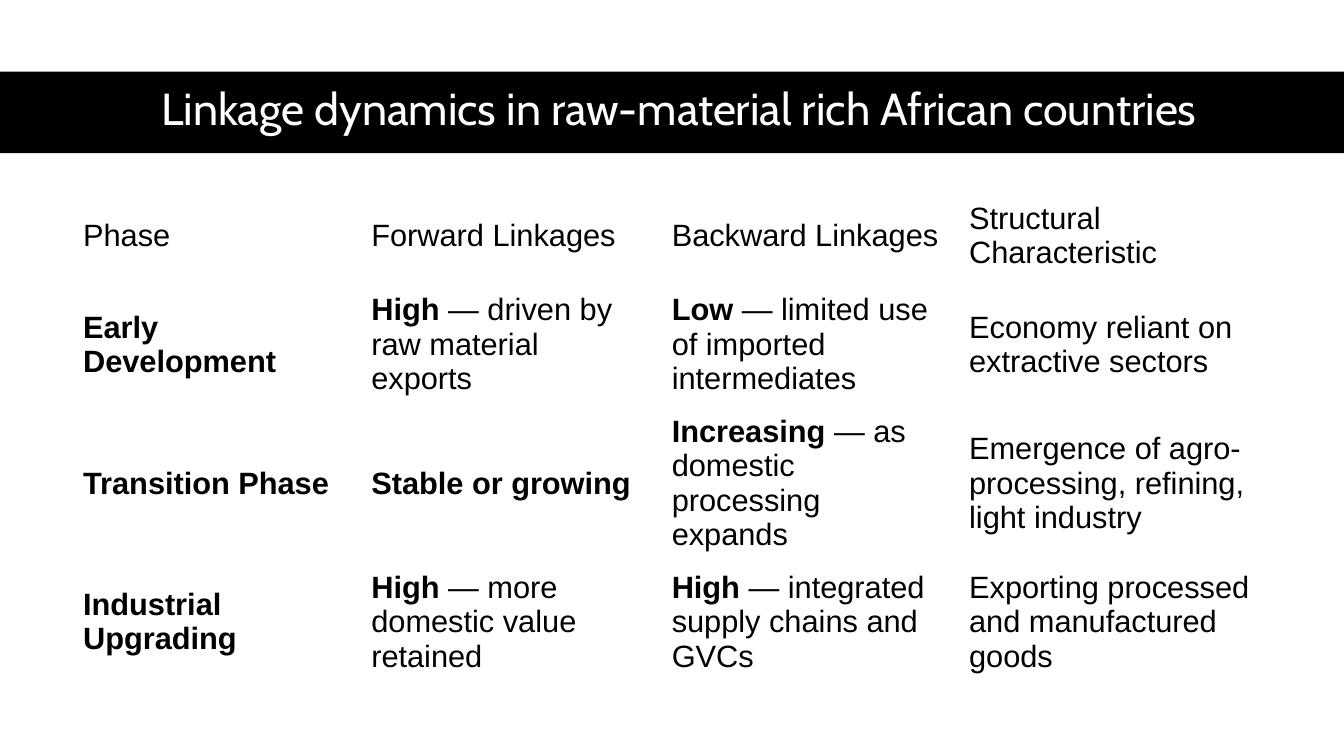
from pptx import Presentation
from pptx.dml.color import RGBColor
from pptx.enum.shapes import MSO_SHAPE
from pptx.enum.text import MSO_ANCHOR, MSO_AUTO_SIZE, PP_ALIGN
from pptx.util import Pt

BLACK = RGBColor(0x00, 0x00, 0x00)
WHITE = RGBColor(0xFF, 0xFF, 0xFF)
RECTANGLE = MSO_SHAPE.RECTANGLE
MIDDLE = MSO_ANCHOR.MIDDLE
CENTER = PP_ALIGN.CENTER
NO_AUTOFIT = MSO_AUTO_SIZE.NONE
TITLE_ONLY = 5

SLIDE_WIDTH, SLIDE_HEIGHT = 960, 540
COLUMN_WIDTHS = (205.9, 214.6, 212.4, 225.4)
ROW_HEIGHTS = (64.8, 90.7, 90.7, 90.7)

# Each cell is a pair: bold lead, regular remainder.
LINKAGE_PHASES = (
    (("", "Phase"), ("", "Forward Linkages"), ("", "Backward Linkages"),
     ("", "Structural Characteristic")),
    (("Early Development", ""),
     ("High", " — driven by raw material exports"),
     ("Low", " — limited use of imported intermediates"),
     ("", "Economy reliant on extractive sectors")),
    (("Transition Phase", ""),
     ("Stable or growing", ""),
     ("Increasing", " — as domestic processing expands"),
     ("", "Emergence of agro-processing, refining, light industry")),
    (("Industrial Upgrading", ""),
     ("High", " — more domestic value retained"),
     ("High", " — integrated supply chains and GVCs"),
     ("", "Exporting processed and manufactured goods")),
)


class SlideBuilder:
    title_font, title_size = "Cabin", 32
    body_font, body_size = "Arial", 22
    cell_margin_x, cell_margin_y = 9, 4.5

    def __init__(self, slide):
        self.slide = slide

    def style_font(self, paragraph, name, size, color):
        font = paragraph.font
        font.name, font.size = name, Pt(size)
        font.color.rgb = color

    def band(self, top, height):
        """Draw a full-width black bar behind everything else."""
        bar = self.slide.shapes.add_shape(
            RECTANGLE, 0, Pt(top), Pt(SLIDE_WIDTH), Pt(height))
        bar.shadow.inherit = False
        bar.fill.solid()
        bar.fill.fore_color.rgb = BLACK
        bar.line.fill.background()
        title_element = self.slide.shapes.title.element
        title_element.addprevious(bar.element)

    def title(self, text, left, top, width, height):
        heading = self.slide.shapes.title
        heading.left, heading.top = Pt(left), Pt(top)
        heading.width, heading.height = Pt(width), Pt(height)
        frame = heading.text_frame
        frame.text = text
        frame.word_wrap = True
        frame.auto_size = NO_AUTOFIT
        frame.vertical_anchor = MIDDLE
        paragraph = frame.paragraphs[0]
        paragraph.alignment = CENTER
        paragraph.line_spacing = 0.9
        self.style_font(paragraph, self.title_font, self.title_size, WHITE)

    def cell(self, cell, lead, remainder):
        cell.fill.background()
        cell.vertical_anchor = MIDDLE
        cell.margin_left = cell.margin_right = Pt(self.cell_margin_x)
        cell.margin_top = cell.margin_bottom = Pt(self.cell_margin_y)
        paragraph = cell.text_frame.paragraphs[0]
        self.style_font(paragraph, self.body_font, self.body_size, BLACK)
        for text, bold in ((lead, True), (remainder, False)):
            if text:
                run = paragraph.add_run()
                run.text = text
                run.font.bold = bold

    def table(self, rows, left, top, widths, heights):
        table = self.slide.shapes.add_table(
            len(heights), len(widths), Pt(left), Pt(top),
            Pt(sum(widths)), Pt(sum(heights))).table
        table.first_row = table.horz_banding = False
        for column, width in zip(table.columns, widths):
            column.width = Pt(width)
        for row, height, contents in zip(table.rows, heights, rows):
            row.height = Pt(height)
            for cell, (lead, remainder) in zip(row.cells, contents):
                self.cell(cell, lead, remainder)


def main():
    presentation = Presentation()
    presentation.slide_width = Pt(SLIDE_WIDTH)
    presentation.slide_height = Pt(SLIDE_HEIGHT)
    layout = presentation.slide_layouts[TITLE_ONLY]
    builder = SlideBuilder(presentation.slides.add_slide(layout))

    builder.band(51.2, 58.2)
    builder.title("Linkage dynamics in raw-material rich African countries",
                  43.9, 50.4, 882.7, 58.3)
    builder.table(LINKAGE_PHASES, 50.4, 136.1, COLUMN_WIDTHS, ROW_HEIGHTS)
    presentation.save("out.pptx")


if __name__ == "__main__":
    main()
